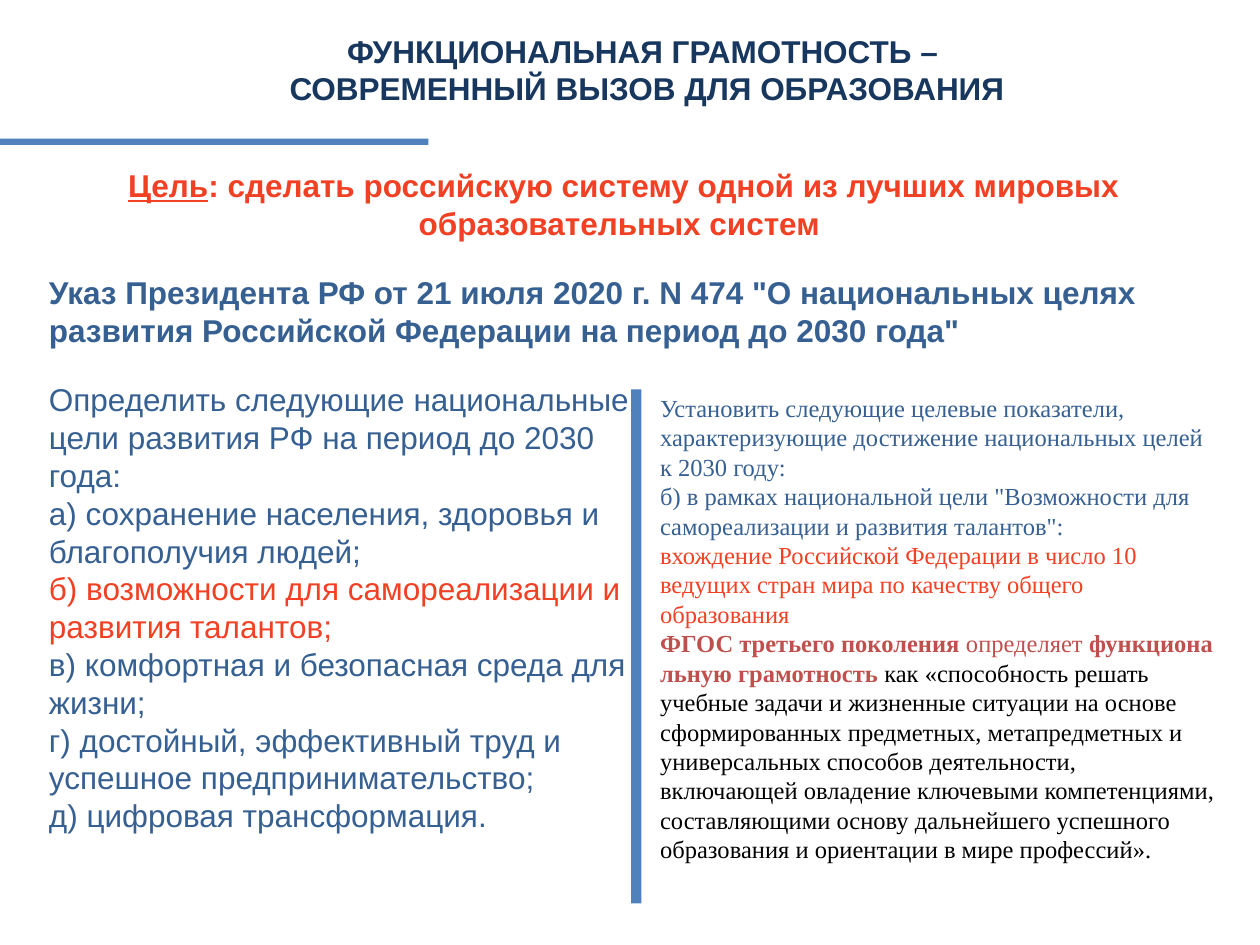
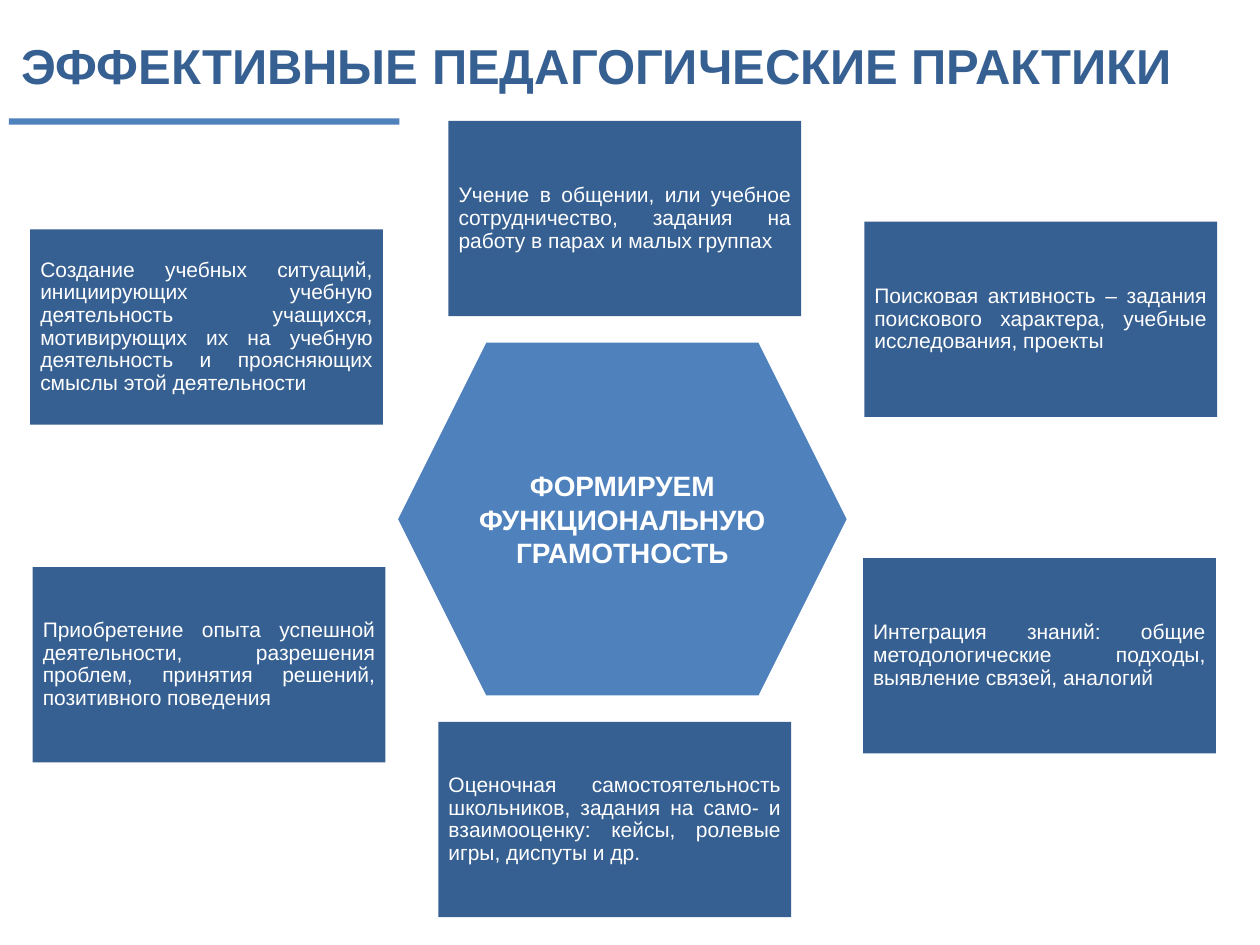
"""Build two slides on functional literacy and effective teaching practices."""
from pptx import Presentation
from pptx.dml.color import RGBColor
from pptx.enum.shapes import MSO_SHAPE as Preset
from pptx.enum.text import MSO_ANCHOR as Anchor, MSO_AUTO_SIZE as AutoSize, PP_ALIGN as Align
from pptx.util import Inches, Pt

COLORS = {"navy": "17375E", "blue": "376092", "accent": "4F81BD", "red": "F14023",
          "brick": "C0504D", "black": "000000", "white": "FFFFFF"}
FRAME = {"word_wrap": True, "auto_size": AutoSize.NONE, "vertical_anchor": Anchor.TOP}
BOX_FRAME = FRAME | {"vertical_anchor": Anchor.MIDDLE} | {
    f"margin_{side}": Inches(0.08) for side in ("left", "top", "right", "bottom")}
HEADING = {"name": "Arial", "size": Pt(18), "bold": True}
BODY = HEADING | {"bold": False}
SERIF = {"name": "Times New Roman", "size": Pt(14), "bold": False}
JUSTIFIED = {"alignment": Align.JUSTIFY}
CENTERED = {"alignment": Align.CENTER}
LEFT = {"alignment": Align.LEFT}


def write(shape, paragraphs, font, layout=LEFT, frame=FRAME):
    for key, value in frame.items():
        setattr(shape.text_frame, key, value)
    for index, runs in enumerate(paragraphs):
        text_frame = shape.text_frame
        paragraph = text_frame.add_paragraph() if index else text_frame.paragraphs[0]
        for key, value in layout.items():
            setattr(paragraph, key, value)
        for text, color, *changes in runs:
            run = paragraph.add_run()
            run.text = text
            for key, value in (font | dict(*changes)).items():
                setattr(run.font, key, value)
            run.font.color.rgb = RGBColor.from_string(COLORS[color])


def add_block(slide, preset, place, color):
    block = slide.shapes.add_shape(preset, *map(Inches, place))
    block.shadow.inherit = False
    block.fill.solid()
    block.fill.fore_color.rgb = RGBColor.from_string(COLORS[color])
    block.line.fill.background()
    return block


prs = Presentation()
prs.slide_width, prs.slide_height = Inches(10), Inches(7.5)

headers = [
    ((0.69, 0.2, 8.89, 0.71), (0, 1.1, 3.4, 0.05), HEADING, CENTERED,
     [[("ФУНКЦИОНАЛЬНАЯ ГРАМОТНОСТЬ – ", "navy")],
      [("СОВРЕМЕННЫЙ ВЫЗОВ ДЛЯ ОБРАЗОВАНИЯ", "navy")]]),
    ((0.07, 0.23, 9.78, 0.57), (0.07, 0.94, 3.1, 0.05), HEADING | {"size": Pt(28)}, JUSTIFIED,
     [[("ЭФФЕКТИВНЫЕ ПЕДАГОГИЧЕСКИЕ ПРАКТИКИ", "blue")]]),
]
for title_place, band_place, font, layout, heading in headers:
    slide = prs.slides.add_slide(prs.slide_layouts[5])
    title = slide.shapes.title
    title.left, title.top, title.width, title.height = map(Inches, title_place)
    write(title, heading, font, layout)
    add_block(slide, Preset.RECTANGLE, band_place, "accent")

challenge, practices = prs.slides

goal = [[("Цель", "red", {"underline": True}),
         (": сделать российскую систему одной из лучших мировых образовательных систем ", "red")]]
decree = [[("Указ Президента РФ от 21 июля 2020 г. N 474 \"О национальных целях развития "
            "Российской Федерации на период до 2030 года\"", "blue")]]
national_goals = [
    [("Определить следующие национальные цели развития РФ на период до 2030 года:", "blue")],
    [("а) сохранение населения, здоровья и благополучия людей;", "blue")],
    [("б) возможности для самореализации и развития талантов;", "red")],
    [("в) комфортная и безопасная среда для жизни;", "blue")],
    [("г) достойный, эффективный труд и успешное предпринимательство;", "blue")],
    [("д) цифровая трансформация.", "blue")],
]
hard_space = chr(160)
standard, defines, literacy = (phrase.replace(" ", hard_space) for phrase in (
    "ФГОС третьего поколения", " определяет ", "функциональную грамотность"))
targets = [
    [("Установить следующие целевые показатели, характеризующие достижение "
      "национальных целей к 2030 году:", "blue")],
    [("б) в рамках национальной цели \"Возможности для самореализации и развития "
      "талантов\":", "blue")],
    [("вхождение Российской Федерации в число 10 ведущих стран мира по качеству "
      "общего образования", "red")],
    [(standard, "brick", {"bold": True}),
     (defines, "brick"),
     (literacy, "brick", {"bold": True}),
     (hard_space + "как «способность решать учебные задачи и жизненные ситуации на основе "
      "сформированных предметных, метапредметных и универсальных способов деятельности, "
      "включающей овладение ключевыми компетенциями, составляющими основу дальнейшего "
      "успешного образования и ориентации в мире профессий».", "black")],
]
for place, paragraphs, font, layout in [
    ((0.29, 2.97, 4.95, 4.18), national_goals, BODY, LEFT),
    ((0.08, 1.27, 9.74, 0.71), goal, HEADING, CENTERED),
    ((0.29, 2.12, 9.53, 0.71), decree, HEADING, LEFT),
    ((5.14, 3.07, 4.62, 3.87), targets, SERIF, LEFT),
]:
    write(challenge.shapes.add_textbox(*map(Inches, place)), paragraphs, font, layout)
add_block(challenge, Preset.RECTANGLE, (5.01, 3.09, 0.08, 4.08), "accent")

practice_layout = JUSTIFIED | {"line_spacing": 0.9}
for left, top, practice in [
    (0.26, 4.5, "Приобретение опыта успешной деятельности, разрешения проблем, принятия "
     "решений, позитивного поведения"),
    (0.24, 1.82, "Создание учебных ситуаций, инициирующих учебную деятельность учащихся, "
     "мотивирующих их на учебную деятельность и проясняющих смыслы этой деятельности"),
    (3.56, 0.96, "Учение в общении, или учебное сотрудничество, задания на работу в парах "
     "и малых группах"),
    (6.86, 1.76, "Поисковая активность – задания поискового характера, учебные "
     "исследования, проекты"),
    (6.85, 4.43, "Интеграция знаний: общие методологические подходы, выявление связей, "
     "аналогий"),
    (3.48, 5.73, "Оценочная самостоятельность школьников, задания на само- и взаимооценку: "
     "кейсы, ролевые игры, диспуты и др."),
]:
    practice_box = add_block(practices, Preset.RECTANGLE, (left, top, 2.8, 1.55), "blue")
    write(practice_box, [[(practice, "white")]], BODY | {"size": Pt(12)},
          practice_layout, BOX_FRAME)

core = add_block(practices, Preset.HEXAGON, (3.16, 2.72, 3.56, 2.8), "accent")
write(core, [[("ФОРМИРУЕМ ФУНКЦИОНАЛЬНУЮ ГРАМОТНОСТЬ", "white")]],
      HEADING | {"size": Pt(16)}, CENTERED, FRAME | {"vertical_anchor": Anchor.MIDDLE})

prs.save("out.pptx")
